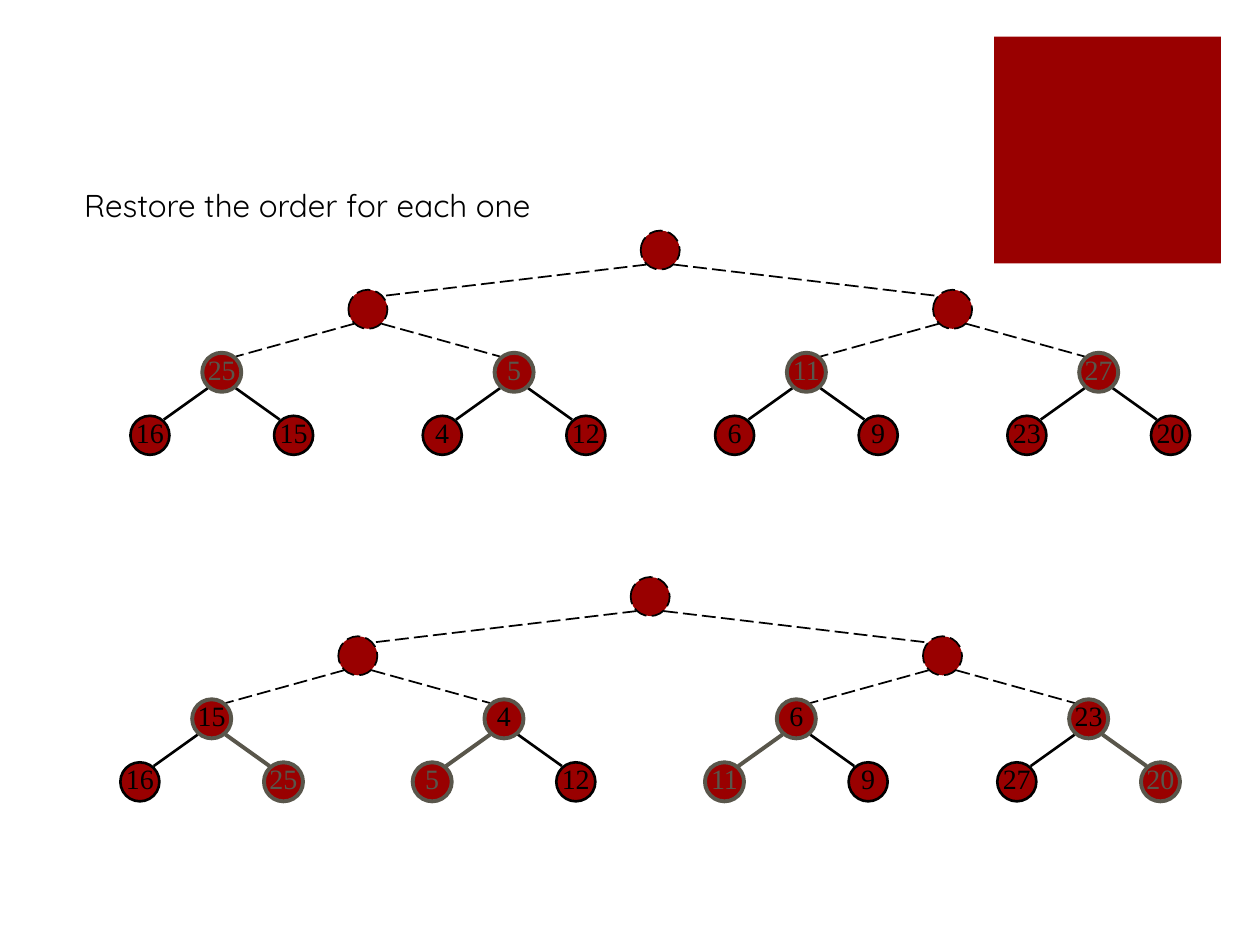
from lxml import etree
from pptx import Presentation, util as u
from pptx.dml.color import RGBColor
from pptx.enum import dml, shapes, text
from pptx.oxml import ns

RED = RGBColor(0x99, 0x00, 0x00)
GREY = RGBColor(0x59, 0x56, 0x4B)
BLACK = RGBColor(0x00, 0x00, 0x00)
SIZE = 0.31
INSET = 0.11
ROWS = [0, 0.47, 0.97, 1.47]
SPREADS = [2.32, 1.16, 0.57]
STARTS = [0.27, 0.27, 0.28]
ENDS = [0.05, 0.03, 0.03]


def write(frame, words, size=16, font="Times New Roman", color=BLACK, align=text.PP_ALIGN.CENTER):
    """Put one formatted line into a text frame."""
    para = frame.paragraphs[0]
    para.alignment = align
    run = para.add_run()
    run.text = words
    run.font.size = u.Pt(size)
    run.font.name = font
    run.font.color.rgb = color


def stroke(line, color, width, dashed):
    """Style an outline or an edge."""
    line.color.rgb = color
    line.width = u.Pt(width)
    if dashed:
        line.dash_style = dml.MSO_LINE.LONG_DASH


def pen(depth, marked):
    """Return the colour, width and dash for a part of the tree."""
    if depth < 2:
        return BLACK, 1, True
    return (GREY, 2.25, False) if marked else (BLACK, 1.5, False)


def add_edge(slide, start, end, style):
    """Join two points with a straight line."""
    points = [u.Inches(v) for v in (*start, *end)]
    edge = slide.shapes.add_connector(shapes.MSO_CONNECTOR.STRAIGHT, *points)
    stroke(edge.line, *style)
    etree.SubElement(edge._element.spPr, ns.qn("a:effectLst"))


def add_node(slide, mid, top, words, style, ink):
    """Draw one round node with its key."""
    node = slide.shapes.add_shape(
        shapes.MSO_SHAPE.OVAL, u.Inches(mid - SIZE / 2), u.Inches(top), u.Inches(SIZE), u.Inches(SIZE))
    node.shadow.inherit = False
    node.fill.solid()
    node.fill.fore_color.rgb = RED
    stroke(node.line, *style)
    frame = node.text_frame
    frame.word_wrap = False
    frame.vertical_anchor = text.MSO_ANCHOR.MIDDLE
    frame.margin_left = frame.margin_right = frame.margin_top = 0
    frame.margin_bottom = u.Inches(0.05)
    if words:
        write(frame, words, color=ink)


def add_tree(slide, mid, top, keys, sunk, depth=0, spot=0):
    """Draw a heap below its root; keys hold the two lowest levels, sunk the marked ones."""
    words = keys[depth - 2][spot] if depth > 1 else ""
    low = words in sunk
    y = top + ROWS[depth]
    if depth < 3:
        for side in (-1, 1):
            child = 2 * spot + (side + 1) // 2
            x = mid + side * SPREADS[depth]
            marked = depth == 2 and keys[1][child] in sunk
            add_edge(slide, (mid + side * INSET, y + STARTS[depth]),
                     (x - side * INSET, top + ROWS[depth + 1] + ENDS[depth]), pen(depth, marked))
            add_tree(slide, x, top, keys, sunk, depth + 1, child)
    add_node(slide, mid, y, words, pen(depth, depth == 2 or low), GREY if low else BLACK)


def add_block(slide, left, top, side):
    """Draw the plain corner square."""
    block = slide.shapes.add_shape(
        shapes.MSO_SHAPE.RECTANGLE, u.Inches(left), u.Inches(top), u.Inches(side), u.Inches(side))
    block.shadow.inherit = False
    block.fill.solid()
    block.fill.fore_color.rgb = RED
    block.line.fill.background()


def add_lead(slide, left, top, width, height):
    """Write the instruction above the trees."""
    box = slide.shapes.add_textbox(u.Inches(left), u.Inches(top), u.Inches(width), u.Inches(height))
    box.text_frame.word_wrap = False
    box.text_frame.auto_size = text.MSO_AUTO_SIZE.SHAPE_TO_FIT_TEXT
    write(box.text_frame, "Restore the order for each one", size=18, font="Quicksand",
          align=text.PP_ALIGN.LEFT)


def main():
    """Build and save the slide."""
    deck = Presentation()
    deck.slide_width, deck.slide_height = u.Inches(10), u.Inches(7.5)
    slide = deck.slides.add_slide(deck.slide_layouts[6])
    add_block(slide, 7.89, 0.29, 1.8)
    before = [["25", "5", "11", "27"], ["16", "15", "4", "12", "6", "9", "23", "20"]]
    after = [["15", "4", "6", "23"], ["16", "25", "5", "12", "11", "9", "27", "20"]]
    add_tree(slide, 5.24, 1.83, before, {"25", "5", "11", "27"})
    add_tree(slide, 5.16, 4.58, after, {"25", "5", "11", "20"})
    add_lead(slide, 0.57, 1.43, 3.97, 0.4)
    deck.save("out.pptx")


if __name__ == "__main__":
    main()
